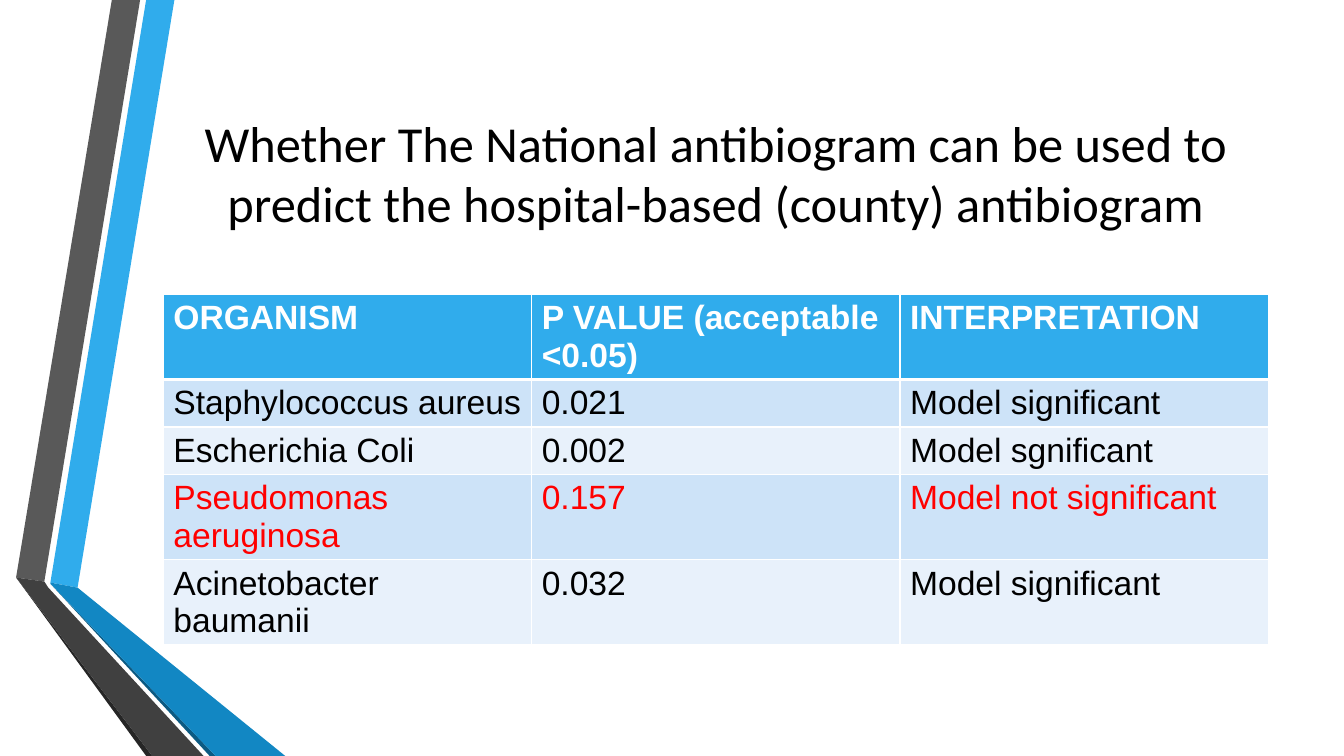
from dataclasses import dataclass

from lxml import etree
from pptx import Presentation
from pptx.dml.color import RGBColor
from pptx.enum.text import MSO_ANCHOR, MSO_AUTO_SIZE, PP_ALIGN
from pptx.oxml.ns import qn
from pptx.slide import Slide
from pptx.table import _Cell
from pptx.text.text import TextFrame
from pptx.util import Inches, Pt

MIDDLE = MSO_ANCHOR.MIDDLE
CENTER = PP_ALIGN.CENTER
NO_AUTOFIT = MSO_AUTO_SIZE.NONE
TITLE_ONLY = 5

# Slide grid: fine square cells, 100 to the inch
CELL = Inches(0.01)
COLUMNS, ROWS = 1333, 750


@dataclass(frozen=True)
class Theme:
    title_font: str = "Calibri"
    table_font: str = "Arial"
    title_size: int = 36
    table_size: int = 24
    text: str = "000000"
    alert: str = "FF0000"
    white: str = "FFFFFF"
    blue: str = "30ACEC"
    blue_fold: str = "1287C3"
    blue_edge: str = "0C5A82"
    grey: str = "595959"
    grey_fold: str = "404040"
    grey_edge: str = "262626"
    bands: tuple[str, str] = ("CDE3F8", "E8F1FB")
    thin_line: int = 1
    thick_line: int = 3


@dataclass(frozen=True)
class Ribbon:
    color: str
    corners: tuple[tuple[int, int], ...]


@dataclass(frozen=True)
class Result:
    organism: str
    p_value: str
    interpretation: str
    alert: bool = False

    def texts(self) -> tuple[str, str, str]:
        return self.organism, self.p_value, self.interpretation


@dataclass(frozen=True)
class Area:
    column: int
    row: int
    columns: int
    rows: int

    def box(self) -> tuple[int, int, int, int]:
        return (self.column * CELL, self.row * CELL,
                self.columns * CELL, self.rows * CELL)


THEME = Theme()
TITLE = ("Whether The National antibiogram can be used to predict "
         "the hospital-based (county) antibiogram")
TITLE_AREA = Area(162, 75, 1096, 192)
ROW_HEIGHT = 41

RIBBONS = (
    Ribbon(THEME.blue, ((50, 578), (77, 583), (173, 0), (145, 0))),
    Ribbon(THEME.grey, ((139, 0), (111, 0), (16, 573), (44, 577))),
    Ribbon(THEME.grey_edge, ((16, 573), (145, ROWS), (151, ROWS))),
    Ribbon(THEME.blue_edge, ((50, 579), (208, ROWS), (214, ROWS))),
    Ribbon(THEME.blue_fold, ((50, 579), (214, ROWS), (283, ROWS), (77, 583), (50, 578))),
    Ribbon(THEME.grey_fold, ((202, ROWS), (48, 583), (44, 577), (16, 573), (151, ROWS))),
)

HEADER = Result("ORGANISM", "P VALUE (acceptable <0.05)", "INTERPRETATION")
RESULTS = (
    Result("Staphylococcus aureus", "0.021", "Model significant"),
    Result("Escherichia Coli", "0.002", "Model sgnificant"),
    Result("Pseudomonas aeruginosa", "0.157", "Model not significant", alert=True),
    Result("Acinetobacter baumanii", "0.032", "Model significant"),
)
TABLE_AREA = Area(162, 292, 1096, ROW_HEIGHT * (len(RESULTS) + 1))


def rgb(color: str) -> RGBColor:
    return RGBColor.from_string(color)


def add_run(frame: TextFrame, text: str, font: str, size: int, color: str,
            bold: bool = False) -> None:
    run = frame.paragraphs[0].add_run()
    run.text = text
    run.font.name = font
    run.font.size = Pt(size)
    run.font.bold = bold
    run.font.color.rgb = rgb(color)


def draw_ribbon(slide: Slide, ribbon: Ribbon) -> None:
    start, *others = [(column * CELL, row * CELL) for column, row in ribbon.corners]
    builder = slide.shapes.build_freeform(*start)
    builder.add_line_segments(others, close=True)
    shape = builder.convert_to_shape()
    shape.shadow.inherit = False
    shape.fill.solid()
    shape.fill.fore_color.rgb = rgb(ribbon.color)
    shape.line.fill.background()


def draw_title(slide: Slide) -> None:
    title = slide.shapes.title
    title.left, title.top, title.width, title.height = TITLE_AREA.box()
    frame = title.text_frame
    frame.word_wrap = True
    frame.auto_size = NO_AUTOFIT
    frame.vertical_anchor = MIDDLE
    frame.paragraphs[0].alignment = CENTER
    add_run(frame, TITLE, THEME.title_font, THEME.title_size, THEME.text)


def set_borders(cell: _Cell, top: int, bottom: int) -> None:
    properties = cell._tc.get_or_add_tcPr()
    thin = THEME.thin_line
    for side, width in (("L", thin), ("R", thin), ("T", top), ("B", bottom)):
        line = etree.SubElement(properties, qn(f"a:ln{side}"), w=str(Pt(width)))
        fill = etree.SubElement(line, qn("a:solidFill"))
        etree.SubElement(fill, qn("a:srgbClr"), val=THEME.white)


def draw_table(slide: Slide) -> None:
    records = (HEADER, *RESULTS)
    column_count = len(HEADER.texts())
    table = slide.shapes.add_table(len(records), column_count, *TABLE_AREA.box()).table
    for row, record in enumerate(records):
        is_header = row == 0
        fill = THEME.blue if is_header else THEME.bands[(row - 1) % 2]
        color = THEME.white if is_header else THEME.alert if record.alert else THEME.text
        top = THEME.thick_line if row == 1 else THEME.thin_line
        bottom = THEME.thick_line if is_header else THEME.thin_line
        for column, text in enumerate(record.texts()):
            cell = table.cell(row, column)
            set_borders(cell, top, bottom)
            cell.fill.solid()
            cell.fill.fore_color.rgb = rgb(fill)
            add_run(cell.text_frame, text, THEME.table_font, THEME.table_size,
                    color, bold=is_header)


def main() -> None:
    presentation = Presentation()
    presentation.slide_width = COLUMNS * CELL
    presentation.slide_height = ROWS * CELL
    slide = presentation.slides.add_slide(presentation.slide_layouts[TITLE_ONLY])

    # Folded ribbons along the left edge
    for ribbon in RIBBONS:
        draw_ribbon(slide, ribbon)

    # Heading and results
    draw_title(slide)
    draw_table(slide)
    presentation.save("out.pptx")


if __name__ == "__main__":
    main()
